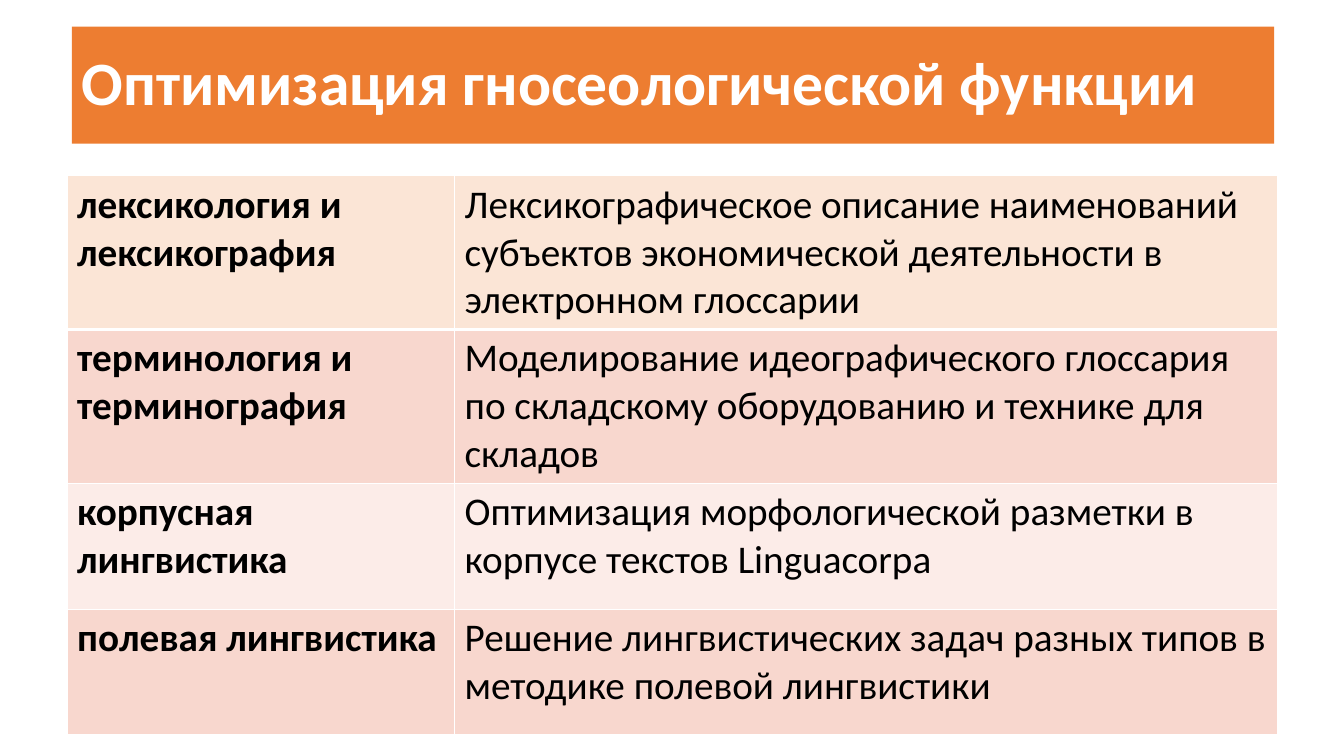
import pptx
import pptx.util
import pptx.dml.color
import pptx.enum.text
import pptx.oxml
import pptx.oxml.ns
from pptx.util import Cm

COLORS = {
    "white": "FFFFFF",
    "black": "000000",
    "orange": "ED7D31",
    "peach": "FBE5D6",
    "rose": "F8D7CE",
    "blush": "FCECE8",
}
FONT = "Calibri"
TITLE = "Оптимизация гносеологической функции"
ROWS = [
    ("лексикология и лексикография",
     "Лексикографическое описание наименований субъектов экономической "
     "деятельности в электронном глоссарии", "peach", 3.76),
    ("терминология и терминография",
     "Моделирование идеографического глоссария по складскому оборудованию "
     "и технике для складов", "rose", 3.76),
    ("корпусная лингвистика",
     "Оптимизация морфологической разметки в корпусе текстов Linguacorpa",
     "blush", 3.17),
    ("полевая лингвистика",
     "Решение лингвистических задач разных типов в методике полевой "
     "лингвистики", "rose", 3.17),
]


def rgb(name):
    return pptx.dml.color.RGBColor.from_string(COLORS[name])


def write(tf, text, size=28, color="black", bold=False, spacing=None):
    p = tf.paragraphs[0]
    p.alignment = pptx.enum.text.PP_ALIGN.LEFT
    if spacing:
        p.line_spacing = spacing
    r = p.add_run()
    r.text = text
    r.font.name = FONT
    r.font.size = pptx.util.Pt(size)
    r.font.bold = bold
    r.font.color.rgb = rgb(color)


def fill(part, color):
    part.fill.solid()
    part.fill.fore_color.rgb = rgb(color)


def set_borders(cell, **widths):
    tcPr = cell._tc.get_or_add_tcPr()
    for i, side in enumerate("LRTB"):
        width = int(pptx.util.Pt(widths.get(side, 1)))
        tcPr.insert(i, pptx.oxml.parse_xml(
            f'<a:ln{side} {pptx.oxml.ns.nsdecls("a")} w="{width}">'
            f'<a:solidFill><a:srgbClr val="{COLORS["white"]}"/></a:solidFill>'
            f'</a:ln{side}>'))


def add_title(s, left, top, width, height):
    sp = s.shapes.title
    sp.left, sp.top, sp.width, sp.height = left, top, width, height
    fill(sp, "orange")
    tf = sp.text_frame
    tf.word_wrap = True
    tf.auto_size = pptx.enum.text.MSO_AUTO_SIZE.NONE
    tf.vertical_anchor = pptx.enum.text.MSO_ANCHOR.MIDDLE
    write(tf, TITLE, size=44, color="white", bold=True, spacing=0.9)


def add_topics(s, left, top, width, height):
    table = s.shapes.add_table(len(ROWS), 2, left, top, width, height).table
    table.columns[0].width = int(width * 0.32)
    table.columns[1].width = width - table.columns[0].width
    for i, (field, topic, color, row_height) in enumerate(ROWS):
        table.rows[i].height = Cm(row_height)
        for j, text in enumerate((field, topic)):
            cell = table.cell(i, j)
            fill(cell, color)
            write(cell.text_frame, text, bold=j == 0)
            set_borders(cell, T=3 if i == 1 else 1, B=3 if i == 0 else 1)


def main():
    prs = pptx.Presentation()
    prs.slide_width, prs.slide_height = Cm(33.87), Cm(19.05)
    s = prs.slides.add_slide(prs.slide_layouts[5])
    add_title(s, Cm(1.81), Cm(0.67), Cm(30.3), Cm(2.95))
    add_topics(s, Cm(1.69), Cm(4.43), Cm(30.52), Cm(13.86))
    prs.save("out.pptx")


if __name__ == "__main__":
    main()
